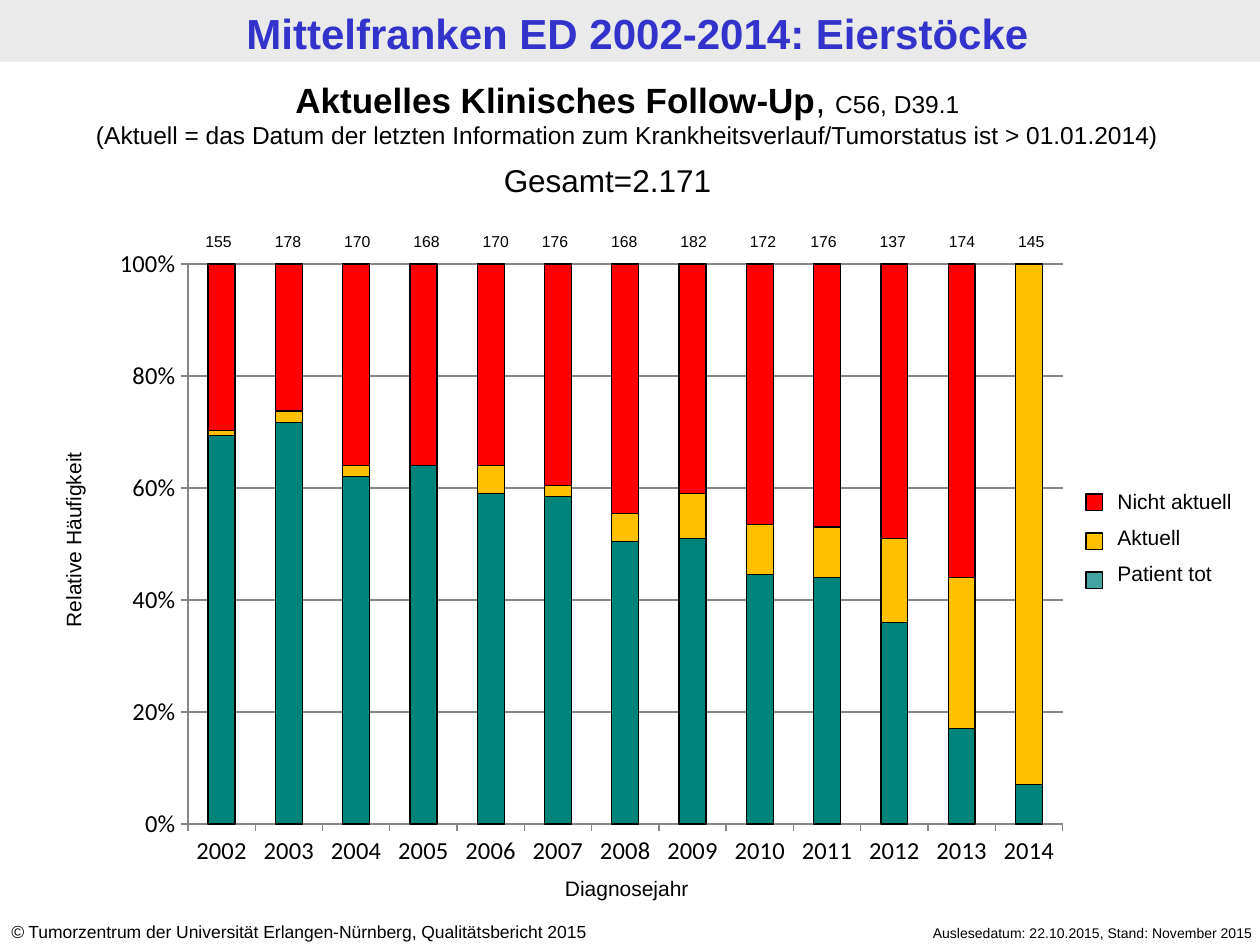
"""Build the slide on current clinical follow-up by year of diagnosis."""
from lxml import etree
from pptx import Presentation
from pptx.chart.data import CategoryChartData
from pptx.dml.color import RGBColor
from pptx.enum.chart import XL_CHART_TYPE, XL_TICK_MARK
from pptx.enum.shapes import MSO_SHAPE
from pptx.enum.text import PP_ALIGN
from pptx.oxml import parse_xml
from pptx.oxml.ns import nsdecls, qn
from pptx.util import Inches, Pt

BLACK = RGBColor(0x00, 0x00, 0x00)
BLUE = RGBColor(0x33, 0x33, 0xCC)
BAND = RGBColor(0xEA, 0xEA, 0xEA)
GRAY = RGBColor(0x86, 0x86, 0x86)
TEAL = RGBColor(0x00, 0x83, 0x78)
TEAL_KEY = RGBColor(0x00, 0x83, 0x80)
AMBER = RGBColor(0xFF, 0xC0, 0x00)
RED = RGBColor(0xFF, 0x00, 0x00)

prs = Presentation()
prs.slide_width, prs.slide_height = Inches(10), Inches(7.5)
s = prs.slides.add_slide(prs.slide_layouts[6])


def add_text(paras, x, y, w, h, size=12, align=PP_ALIGN.LEFT, color=BLACK,
             bold=False, gap=0, rotation=0):
    """Add a box; each paragraph is a string or a list of (text, font settings)."""
    sp = s.shapes.add_textbox(Inches(x), Inches(y), Inches(w), Inches(h))
    sp.rotation = rotation
    tf = sp.text_frame
    tf.word_wrap = True
    for i, runs in enumerate([paras] if isinstance(paras, str) else paras):
        p = tf.add_paragraph() if i else tf.paragraphs[0]
        p.alignment = align
        if i and gap:
            p.space_before = Pt(gap)
        for text, fmt in [(runs, {})] if isinstance(runs, str) else runs:
            r = p.add_run()
            r.text = text
            r.font.name = "Arial"
            r.font.size = Pt(fmt.get("size", size))
            r.font.bold = fmt.get("bold", bold)
            r.font.italic = fmt.get("italic", False)
            r.font.color.rgb = color


def add_rect(x, y, w, h, fill, outlined=True):
    sp = s.shapes.add_shape(MSO_SHAPE.RECTANGLE, Inches(x), Inches(y), Inches(w), Inches(h))
    sp.shadow.inherit = False
    sp.fill.solid()
    sp.fill.fore_color.rgb = fill
    if outlined:
        sp.line.color.rgb = BLACK
        sp.line.width = Pt(0.75)
    else:
        sp.line.fill.background()
    return sp


add_rect(0, 0, 10, 0.49, BAND, outlined=False)
add_text("Mittelfranken ED 2002-2014: Eierstöcke", 0.06, 0.01, 10, 0.49,
         size=24, align=PP_ALIGN.CENTER, color=BLUE, bold=True)
add_text("Auslesedatum: 22.10.2015, Stand: November 2015", 6.65, 7.29, 3.39, 0.24,
         size=8, align=PP_ALIGN.RIGHT)
add_text([[("©", {"italic": True}),
           (" Tumorzentrum der Universität Erlangen-Nürnberg, Qualitätsbericht 2015", {})]],
         -0.01, 7.26, 5.24, 0.27, size=10)

data = CategoryChartData()
data.categories = [str(year) for year in range(2002, 2015)]
data.add_series("Series 1", (70, 71, 62, 64, 59, 59, 51, 51, 45, 44, 36, 17, 7))
data.add_series("Series 2", (1, 2, 2, 0, 5, 2, 5, 8, 9, 9, 15, 27, 93))
data.add_series("Series 3", (30, 26, 36, 36, 36, 40, 45, 41, 47, 47, 49, 56, 0))
chart = s.shapes.add_chart(XL_CHART_TYPE.COLUMN_STACKED_100, Inches(0.79), Inches(1.87),
                           Inches(7.8), Inches(5.11), data).chart
chart.has_legend = False
chart.has_title = False
chart.font.name = "Calibri"
chart.font.size = Pt(18)
chart.font.color.rgb = BLACK

plot = chart.plots[0]
plot.gap_width = 150
plot.overlap = 100
plot.vary_by_categories = False
for series, color in zip(plot.series, (TEAL, AMBER, RED)):
    series.format.fill.solid()
    series.format.fill.fore_color.rgb = color
    series.format.line.color.rgb = BLACK
    series.format.line.width = Pt(0.75)

va = chart.value_axis
for axis in (chart.category_axis, va):
    axis.major_tick_mark = XL_TICK_MARK.OUTSIDE
    axis.minor_tick_mark = XL_TICK_MARK.NONE
    axis.tick_labels.font.size = Pt(14)
    axis.format.line.color.rgb = GRAY
    axis.format.line.width = Pt(0.75)
va.minimum_scale, va.maximum_scale, va.major_unit = 0, 1, 0.2
va.tick_labels.number_format = "0%"
va.tick_labels.number_format_is_linked = False
va.has_major_gridlines = True
va.major_gridlines.format.line.color.rgb = GRAY
va.major_gridlines.format.line.width = Pt(0.75)

area = chart.element.find(".//" + qn("c:plotArea"))
for layout in area.findall(qn("c:layout")):
    area.remove(layout)
area.insert(0, parse_xml(
    f'<c:layout {nsdecls("c")}><c:manualLayout><c:layoutTarget val="inner"/>'
    '<c:xMode val="edge"/><c:yMode val="edge"/><c:x val="0.09"/><c:y val="0.044"/>'
    '<c:w val="0.89"/><c:h val="0.87"/></c:manualLayout></c:layout>'))

add_text("Relative Häufigkeit", -0.62, 4.13, 2.41, 0.31, align=PP_ALIGN.CENTER, rotation=270)
add_text("Diagnosejahr", 3.85, 6.9, 2.25, 0.31, align=PP_ALIGN.CENTER)

case_groups = [
    (1.46, (155, 178, 170, 168, 170)),
    (4.13, (176, 168, 182, 172)),
    (6.26, (176, 137, 174, 145)),
]
for left, counts in case_groups:
    for i, count in enumerate(counts):
        add_text(str(count), left + 0.55 * i, 1.79, 0.55, 0.25, size=9, align=PP_ALIGN.CENTER)

add_text(["Nicht aktuell", "Aktuell", "Patient tot"], 8.77, 3.83, 1.42, 0.91, gap=6)
for i, color in enumerate((RED, AMBER, TEAL_KEY)):
    key = add_rect(8.62, 3.92 + 0.31 * i, 0.13, 0.13, color)
rgb = key.fill._xPr.find(".//" + qn("a:srgbClr"))
etree.SubElement(rgb, qn("a:alpha")).set("val", "74000")

add_text([[("Aktuelles Klinisches Follow-Up", {"size": 20, "bold": True}),
           (", ", {"size": 20}), ("C56, D39.1", {})],
          "(Aktuell = das Datum der letzten Information zum "
          "Krankheitsverlauf/Tumorstatus ist > 01.01.2014)"],
         -0.04, 0.57, 10.04, 0.67, size=14, align=PP_ALIGN.CENTER)
add_text("Gesamt=2.171", 3.9, 1.23, 2.2, 0.4, size=18)

prs.save("out.pptx")
